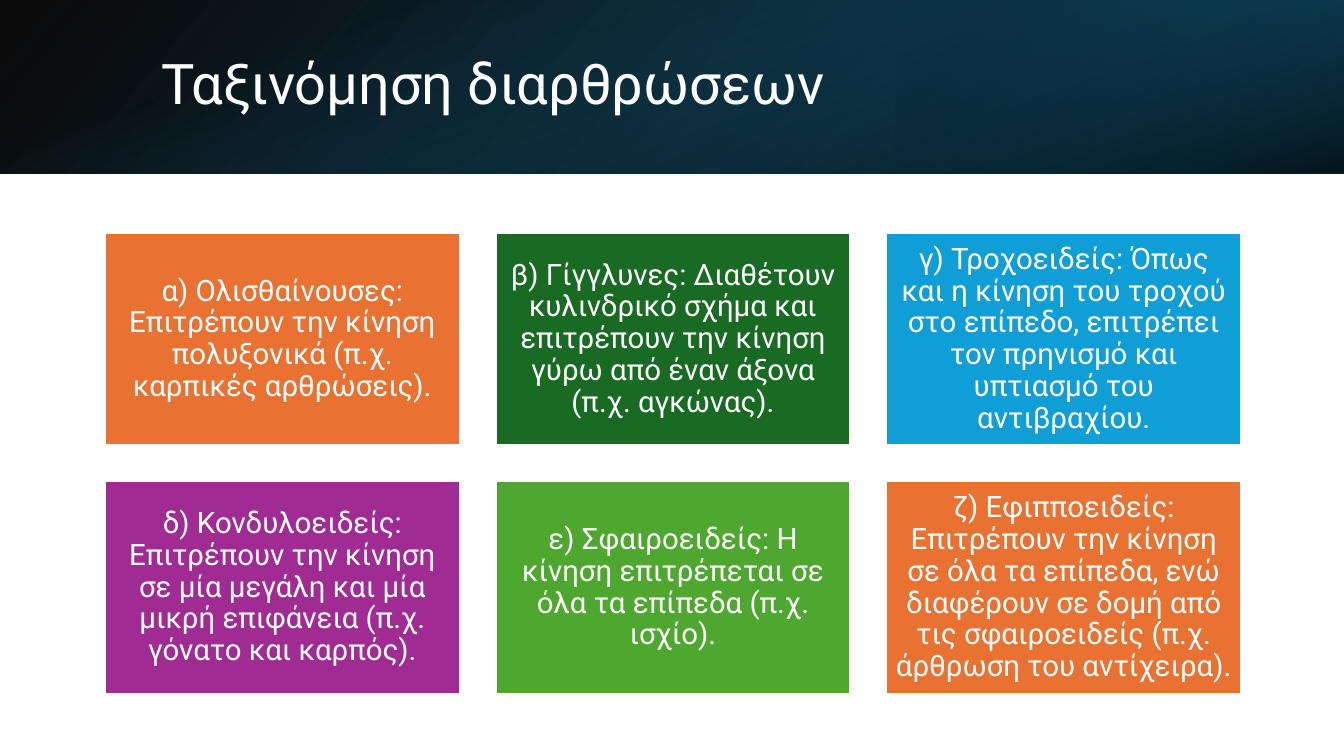
from dataclasses import dataclass

from lxml import etree
from pptx import Presentation
from pptx.dml.color import RGBColor
from pptx.enum.shapes import MSO_SHAPE
from pptx.enum.text import MSO_ANCHOR, PP_ALIGN
from pptx.oxml.ns import qn
from pptx.util import Inches, Pt

RECT = MSO_SHAPE.RECTANGLE
MIDDLE = MSO_ANCHOR.MIDDLE
LEFT, CENTER = PP_ALIGN.LEFT, PP_ALIGN.CENTER


@dataclass(frozen=True)
class Theme:
    font: str = "Roboto"
    title_size: int = 40
    card_size: int = 21
    white: str = "FFFFFF"
    black: str = "000000"
    deep_blue: str = "104862"
    dark_blue: str = "0B3041"
    blue: str = "156082"
    orange: str = "E97132"
    dark_green: str = "196B24"
    sky: str = "0F9ED5"
    purple: str = "A02B93"
    green: str = "4EA72E"


THEME = Theme()
SLIDE_W, SLIDE_H = 13.33, 7.5
BAND_H = 1.72
CARD_W, CARD_H = 3.52, 2.11
GRID_LEFT, GRID_TOP, GRID_W = 1.04, 2.31, 11.27
COLUMNS = 3
GAP = (GRID_W - COLUMNS * CARD_W) / (COLUMNS - 1)

CARDS = [
    (THEME.orange, "α) Ολισθαίνουσες: Επιτρέπουν την κίνηση πολυξονικά (π.χ. καρπικές αρθρώσεις)."),
    (THEME.dark_green, "β) Γίγγλυνες: Διαθέτουν κυλινδρικό σχήμα και επιτρέπουν την κίνηση "
                       "γύρω από έναν άξονα (π.χ. αγκώνας)."),
    (THEME.sky, "γ) Τροχοειδείς: Όπως και η κίνηση του τροχού στο επίπεδο, επιτρέπει "
                "τον πρηνισμό και υπτιασμό του αντιβραχίου."),
    (THEME.purple, "δ) Κονδυλοειδείς: Επιτρέπουν την κίνηση σε μία μεγάλη και μία "
                   "μικρή επιφάνεια (π.χ. γόνατο και καρπός)."),
    (THEME.green, "ε) Σφαιροειδείς: Η κίνηση επιτρέπεται σε όλα τα επίπεδα (π.χ. ισχίο)."),
    (THEME.orange, "ζ) Εφιπποειδείς: Επιτρέπουν την κίνηση σε όλα τα επίπεδα, ενώ διαφέρουν "
                   "σε δομή από τις σφαιροειδείς (π.χ. άρθρωση του αντίχειρα)."),
]


def write_text(tf, text, *, size, color, font, align=LEFT, inset=0.1):
    tf.word_wrap = True
    tf.vertical_anchor = MIDDLE
    tf.margin_left = tf.margin_right = Inches(inset)
    tf.margin_top = tf.margin_bottom = Inches(min(inset, 0.09))
    p = tf.paragraphs[0]
    p.alignment = align
    p.line_spacing = 0.9
    r = p.add_run()
    r.text = text
    r.font.size = Pt(size)
    r.font.name = font
    r.font.color.rgb = RGBColor.from_string(color)


class SlideBuilder:
    def __init__(self, slide, theme):
        self.s = slide
        self.theme = theme

    def rect(self, x, y, w, h):
        sp = self.s.shapes.add_shape(RECT, Inches(x), Inches(y), Inches(w), Inches(h))
        sp.shadow.inherit = False
        return sp

    def gradient(self, x, y, w, h, stops, angle, rotation=0, flip=False):
        sp = self.rect(x, y, w, h)
        sp.line.fill.background()
        sp.rotation = rotation
        if flip:
            sp._element.spPr.find(qn("a:xfrm")).set("flipH", "1")
        sp.fill.gradient()
        sp.fill.gradient_angle = 360 - angle
        for stop, (position, color, _) in zip(sp.fill.gradient_stops, stops):
            stop.position = position / 100
            stop.color.rgb = RGBColor.from_string(color)
        colors = sp._element.spPr.iter(qn("a:srgbClr"))
        for node, (_, _, opacity) in zip(colors, stops):
            if opacity < 100:
                etree.SubElement(node, qn("a:alpha")).set("val", str(opacity * 1000))

    def title(self, text, x, y, w, h):
        sp = self.s.shapes.add_textbox(Inches(x), Inches(y), Inches(w), Inches(h))
        write_text(sp.text_frame, text, size=self.theme.title_size,
                   color=self.theme.white, font=self.theme.font)

    def card(self, text, color, x, y):
        sp = self.rect(x, y, CARD_W, CARD_H)
        sp.fill.solid()
        sp.fill.fore_color.rgb = RGBColor.from_string(color)
        sp.line.color.rgb = RGBColor.from_string(self.theme.white)
        sp.line.width = Pt(1.5)
        write_text(sp.text_frame, text, size=self.theme.card_size, color=self.theme.white,
                   font=self.theme.font, align=CENTER, inset=0.09)


def main():
    prs = Presentation()
    prs.slide_width, prs.slide_height = Inches(SLIDE_W), Inches(SLIDE_H)
    builder = SlideBuilder(prs.slides.add_slide(prs.slide_layouts[6]), THEME)

    builder.gradient(0, 0, SLIDE_W, BAND_H,
                     [(0, THEME.black, 96), (100, THEME.deep_blue, 100)], 140, flip=True)
    builder.gradient(SLIDE_W * 2 / 3, 0, SLIDE_W / 3, BAND_H,
                     [(19, THEME.dark_blue, 68), (100, THEME.blue, 79)], 320,
                     rotation=180, flip=True)
    offset = (SLIDE_W - BAND_H) / 2
    builder.gradient(offset, -offset, BAND_H, SLIDE_W,
                     [(23, THEME.blue, 0), (99, THEME.black, 74)], 340, rotation=90)
    builder.title("Ταξινόμηση διαρθρώσεων", 1.5, 0.38, 10.98, 0.96)

    for i, (color, text) in enumerate(CARDS):
        row, column = divmod(i, COLUMNS)
        builder.card(text, color, GRID_LEFT + column * (CARD_W + GAP),
                     GRID_TOP + row * (CARD_H + GAP))

    prs.save("out.pptx")


if __name__ == "__main__":
    main()
